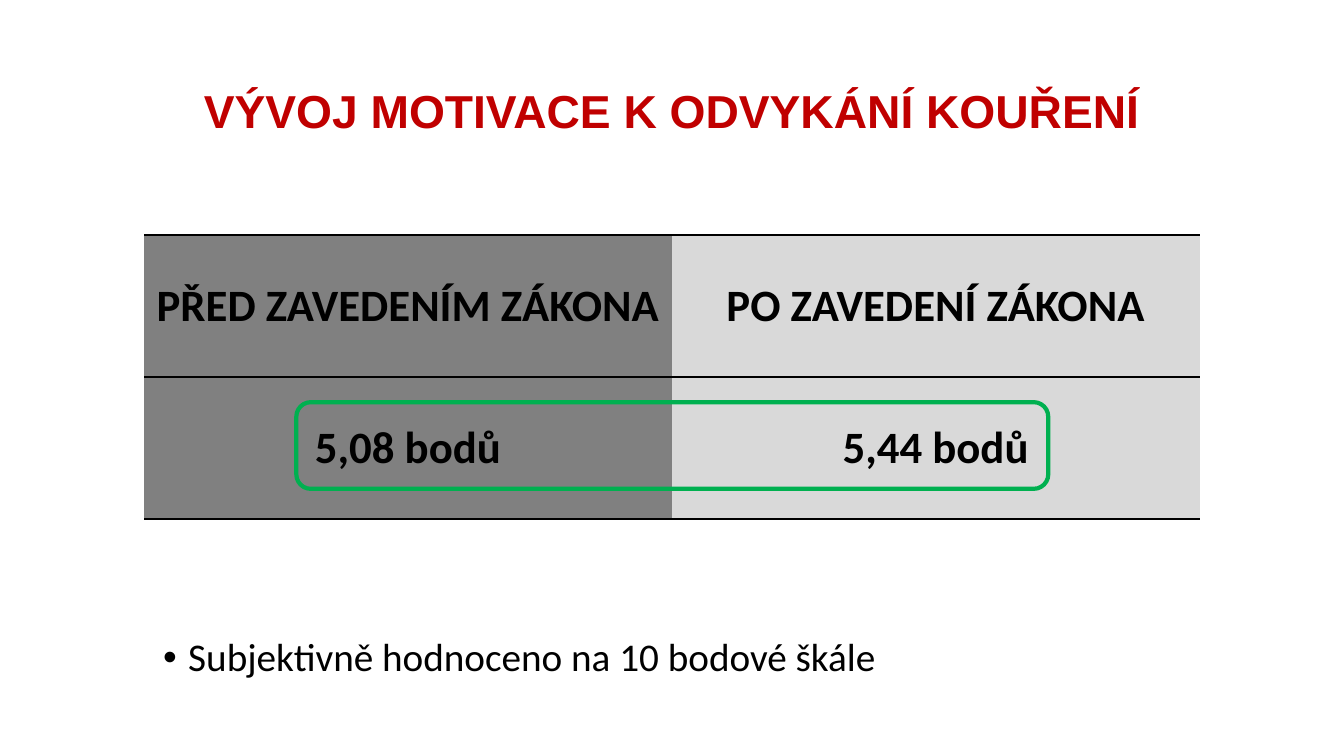
import pptx
import pptx.dml.color
import pptx.enum.shapes
import pptx.enum.text
import pptx.oxml
import pptx.oxml.ns
import pptx.util

Pt = pptx.util.Pt
ALIGN = pptx.enum.text.PP_ALIGN
ANCHOR = pptx.enum.text.MSO_ANCHOR

COLORS = {
    "title": "C00000",
    "text": "000000",
    "before": "808080",
    "after": "D9D9D9",
    "rule": "000000",
    "highlight": "00B050",
}
TITLE = "VÝVOJ MOTIVACE K ODVYKÁNÍ KOUŘENÍ"
NOTE = "Subjektivně hodnoceno na 10 bodové škále"
TABLE_ROWS = [
    ("PŘED ZAVEDENÍM ZÁKONA", "PO ZAVEDENÍ ZÁKONA"),
    ("5,08 bodů", "5,44 bodů"),
]
COLUMN_FILLS = ("before", "after")

SLIDE_SIZE = (960, 540)
TITLE_BOX = (66, 28.8, 828, 104.4)
NOTE_BOX = (109.4, 452.2, 828, 56.2)
TABLE_BOX = (103, 167.8, 753.8, 203)
HIGHLIGHT_BOX = (211.7, 287.3, 537.1, 61.9)
RULE_WIDTH = 2
BULLET_INDENT = 18

TITLE_FONT = {"name": "Arial", "size": Pt(33), "bold": True}
TABLE_FONT = {"name": "Calibri", "size": Pt(32), "bold": True}
NOTE_FONT = {"name": "Calibri", "size": Pt(28), "bold": False}
PLAIN_TABLE_STYLE = "{2D5ABB26-0587-4C30-8999-92F81FD0307C}"


def points(box):
    return [Pt(value) for value in box]


def rgb(name):
    return pptx.dml.color.RGBColor.from_string(COLORS[name])


def set_attributes(target, values):
    for name, value in values.items():
        setattr(target, name, value)


def write(paragraph, text, font, color, layout):
    run = paragraph.add_run()
    run.text = text
    set_attributes(run.font, font)
    run.font.color.rgb = rgb(color)
    set_attributes(paragraph, layout)


def add_text(slide, box, anchor, text, font, color, layout):
    frame = slide.shapes.add_textbox(*points(box)).text_frame
    set_attributes(frame, {"word_wrap": True, "vertical_anchor": anchor})
    paragraph = frame.paragraphs[0]
    write(paragraph, text, font, color, layout)
    return paragraph


def add_bullet(paragraph):
    properties = paragraph._p.get_or_add_pPr()
    properties.set("marL", str(Pt(BULLET_INDENT)))
    properties.set("indent", str(-Pt(BULLET_INDENT)))
    namespace = pptx.oxml.ns.nsdecls("a")
    for element in (f'<a:buFont {namespace} typeface="Arial"/>',
                    f'<a:buChar {namespace} char="•"/>'):
        properties.append(pptx.oxml.parse_xml(element))


def add_rules(cell):
    """Draw lines above and below the cell, none at its sides."""
    properties = cell._tc.get_or_add_tcPr()
    namespace = pptx.oxml.ns.nsdecls("a")
    rule = f'<a:solidFill><a:srgbClr val="{COLORS["rule"]}"/></a:solidFill>'
    for side in "LRTB":
        fill = rule if side in "TB" else "<a:noFill/>"
        properties.append(pptx.oxml.parse_xml(
            f'<a:ln{side} {namespace} w="{Pt(RULE_WIDTH)}">{fill}</a:ln{side}>'))


def add_score_table(slide):
    row_count, column_count = len(TABLE_ROWS), len(COLUMN_FILLS)
    table = slide.shapes.add_table(
        row_count, column_count, *points(TABLE_BOX)).table
    set_attributes(table, {"first_row": False, "horz_banding": False})
    table._tbl.tblPr.find(
        pptx.oxml.ns.qn("a:tableStyleId")).text = PLAIN_TABLE_STYLE
    for row_index, texts in enumerate(TABLE_ROWS):
        for column_index, text in enumerate(texts):
            cell = table.cell(row_index, column_index)
            add_rules(cell)
            cell.fill.solid()
            cell.fill.fore_color.rgb = rgb(COLUMN_FILLS[column_index])
            cell.vertical_anchor = ANCHOR.MIDDLE
            write(cell.text_frame.paragraphs[0], text, TABLE_FONT, "text",
                  {"alignment": ALIGN.CENTER})


def add_highlight(slide):
    shape = slide.shapes.add_shape(
        pptx.enum.shapes.MSO_SHAPE.ROUNDED_RECTANGLE, *points(HIGHLIGHT_BOX))
    shape.shadow.inherit = False
    shape.fill.background()
    shape.line.color.rgb = rgb("highlight")
    shape.line.width = Pt(3)


def main():
    presentation = pptx.Presentation()
    presentation.slide_width, presentation.slide_height = points(SLIDE_SIZE)
    slide = presentation.slides.add_slide(presentation.slide_layouts[6])
    add_text(slide, TITLE_BOX, ANCHOR.MIDDLE, TITLE, TITLE_FONT, "title",
             {"alignment": ALIGN.CENTER, "line_spacing": 0.9})
    note = add_text(slide, NOTE_BOX, ANCHOR.TOP, NOTE, NOTE_FONT, "text",
                    {"line_spacing": 0.9, "space_before": Pt(10)})
    add_bullet(note)
    add_score_table(slide)
    add_highlight(slide)
    presentation.save("out.pptx")


if __name__ == "__main__":
    main()
